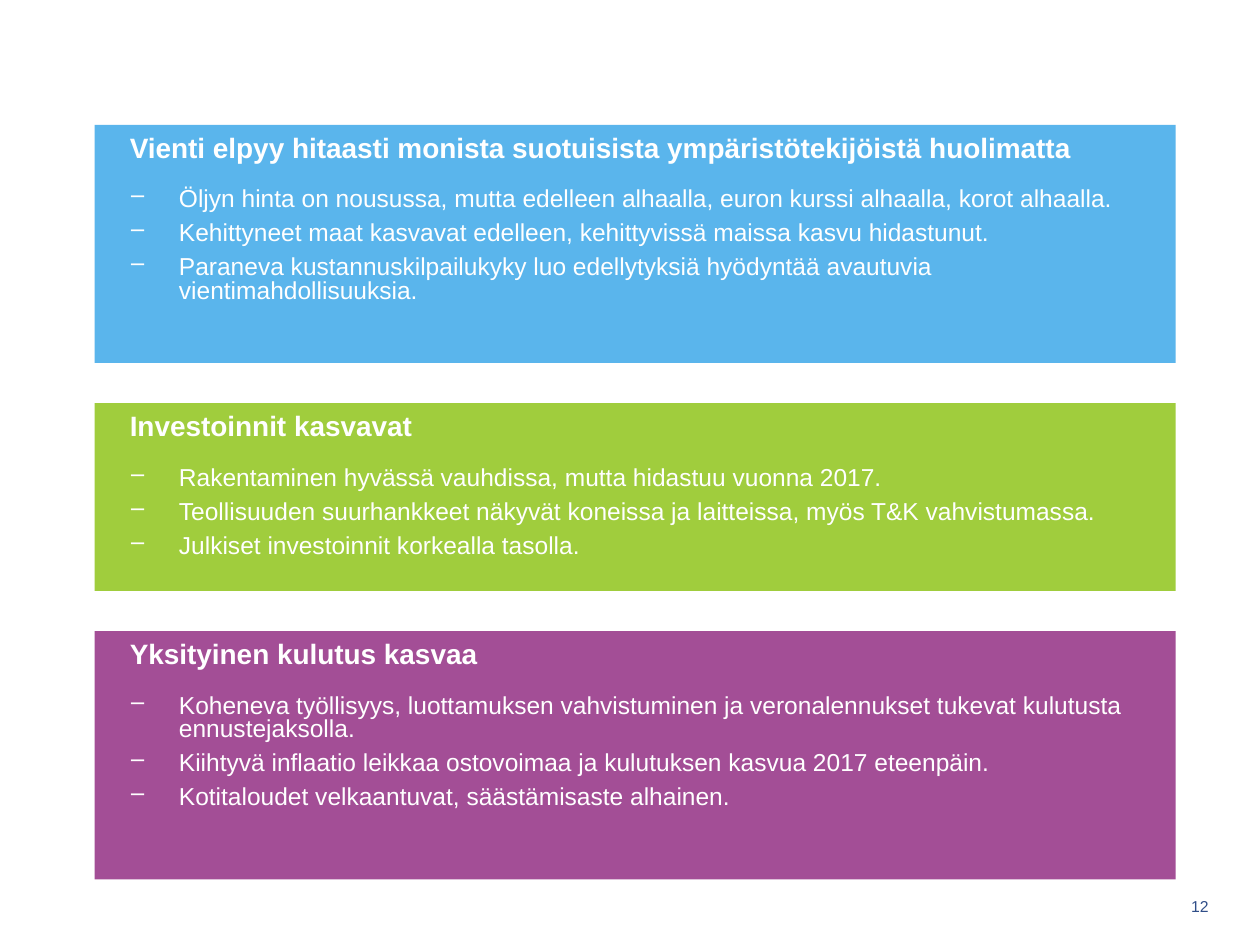
from dataclasses import dataclass

from lxml import etree
from pptx import Presentation
from pptx.dml.color import RGBColor
from pptx.enum.shapes import MSO_SHAPE
from pptx.enum.text import MSO_ANCHOR, PP_ALIGN
from pptx.oxml.ns import qn
from pptx.util import Inches, Pt

RECTANGLE = MSO_SHAPE.RECTANGLE
TOP, MIDDLE = MSO_ANCHOR.TOP, MSO_ANCHOR.MIDDLE
LEFT, RIGHT = PP_ALIGN.LEFT, PP_ALIGN.RIGHT


@dataclass(frozen=True)
class Theme:
    """Colours, font and type sizes of the slide."""
    font: str = "Arial"
    white: str = "FFFFFF"
    navy: str = "304E88"
    blue: str = "5AB5EC"
    green: str = "A0CD3D"
    purple: str = "A34E96"
    heading: int = 16
    point: int = 14
    page_number: int = 9


THEME = Theme()
PANEL_LEFT, PANEL_TOP, PANEL_WIDTH = Inches(0.75), Inches(0.99), Inches(8.58)
PANEL_GAP = Inches(0.32)
HEADING_RISE = Inches(0.07)
POINT_INDENT = Inches(0.39)

PANELS = [
    (THEME.blue, Inches(1.89),
     "Vienti elpyy hitaasti monista suotuisista ympäristötekijöistä huolimatta",
     ["Öljyn hinta on nousussa, mutta edelleen alhaalla, euron kurssi alhaalla, korot alhaalla.",
      "Kehittyneet maat kasvavat edelleen, kehittyvissä maissa kasvu hidastunut.",
      "Paraneva kustannuskilpailukyky luo edellytyksiä hyödyntää avautuvia "
      "vientimahdollisuuksia."]),
    (THEME.green, Inches(1.49),
     "Investoinnit kasvavat",
     ["Rakentaminen hyvässä vauhdissa, mutta hidastuu vuonna 2017.",
      "Teollisuuden suurhankkeet näkyvät koneissa ja laitteissa, myös T&K vahvistumassa.",
      "Julkiset investoinnit korkealla tasolla."]),
    (THEME.purple, Inches(1.97),
     "Yksityinen kulutus kasvaa",
     ["Koheneva työllisyys, luottamuksen vahvistuminen ja veronalennukset tukevat kulutusta "
      "ennustejaksolla.",
      "Kiihtyvä inflaatio leikkaa ostovoimaa ja kulutuksen kasvua 2017 eteenpäin.",
      "Kotitaloudet velkaantuvat, säästämisaste alhainen."]),
]


def style(paragraph, size, color, bold=False):
    """Set the font of a whole paragraph."""
    font = paragraph.font
    font.name, font.size, font.bold = THEME.font, Pt(size), bold
    font.color.rgb = RGBColor.from_string(color)


def inset(frame, top):
    """Give a panel text frame its wrapping, anchor and margins."""
    frame.word_wrap = True
    frame.vertical_anchor = TOP
    frame.margin_left, frame.margin_top = Inches(0.28), top
    frame.margin_right = frame.margin_bottom = Inches(0.2)


def add_dash(paragraph):
    """Hang a paragraph behind a dash bullet."""
    properties = paragraph._p.get_or_add_pPr()
    properties.set("marL", str(POINT_INDENT))
    properties.set("indent", str(-POINT_INDENT))
    etree.SubElement(properties, qn("a:buChar")).set("char", "‒")


def add_panel(slide, left, top, width, height, color, heading, points):
    """Draw a coloured panel with a heading and dashed points."""
    panel = slide.shapes.add_shape(RECTANGLE, left, top, width, height)
    panel.shadow.inherit = False
    panel.fill.solid()
    panel.fill.fore_color.rgb = RGBColor.from_string(color)
    panel.line.fill.background()
    body = panel.text_frame
    inset(body, Inches(0.51))
    for index, point in enumerate(points):
        paragraph = body.add_paragraph() if index else body.paragraphs[0]
        paragraph.text = point
        add_dash(paragraph)
        paragraph.alignment = LEFT
        paragraph.line_spacing = 0.8
        paragraph.space_after = Pt(6)
        style(paragraph, THEME.point, THEME.white)

    title = slide.shapes.add_textbox(left, top - HEADING_RISE, width, Inches(0.63)).text_frame
    inset(title, Inches(0.16))
    title_line = title.paragraphs[0]
    title_line.text = heading
    title_line.space_after = Pt(8)
    style(title_line, THEME.heading, THEME.white, bold=True)


def add_page_number(slide, left, top, width, height, number):
    """Place the page number, right aligned in its box."""
    frame = slide.shapes.add_textbox(left, top, width, height).text_frame
    frame.word_wrap = True
    frame.vertical_anchor = MIDDLE
    paragraph = frame.paragraphs[0]
    paragraph.text = number
    paragraph.alignment = RIGHT
    style(paragraph, THEME.page_number, THEME.navy)


def main():
    """Build the slide and save it."""
    deck = Presentation()
    deck.slide_width, deck.slide_height = Inches(10), Inches(7.5)
    slide = deck.slides.add_slide(deck.slide_layouts[6])
    add_page_number(slide, Inches(9.17), Inches(7.03), Inches(0.52), Inches(0.32), "12")
    top = PANEL_TOP
    for color, height, heading, points in PANELS:
        add_panel(slide, PANEL_LEFT, top, PANEL_WIDTH, height, color, heading, points)
        top += height + PANEL_GAP
    deck.save("out.pptx")


if __name__ == "__main__":
    main()
